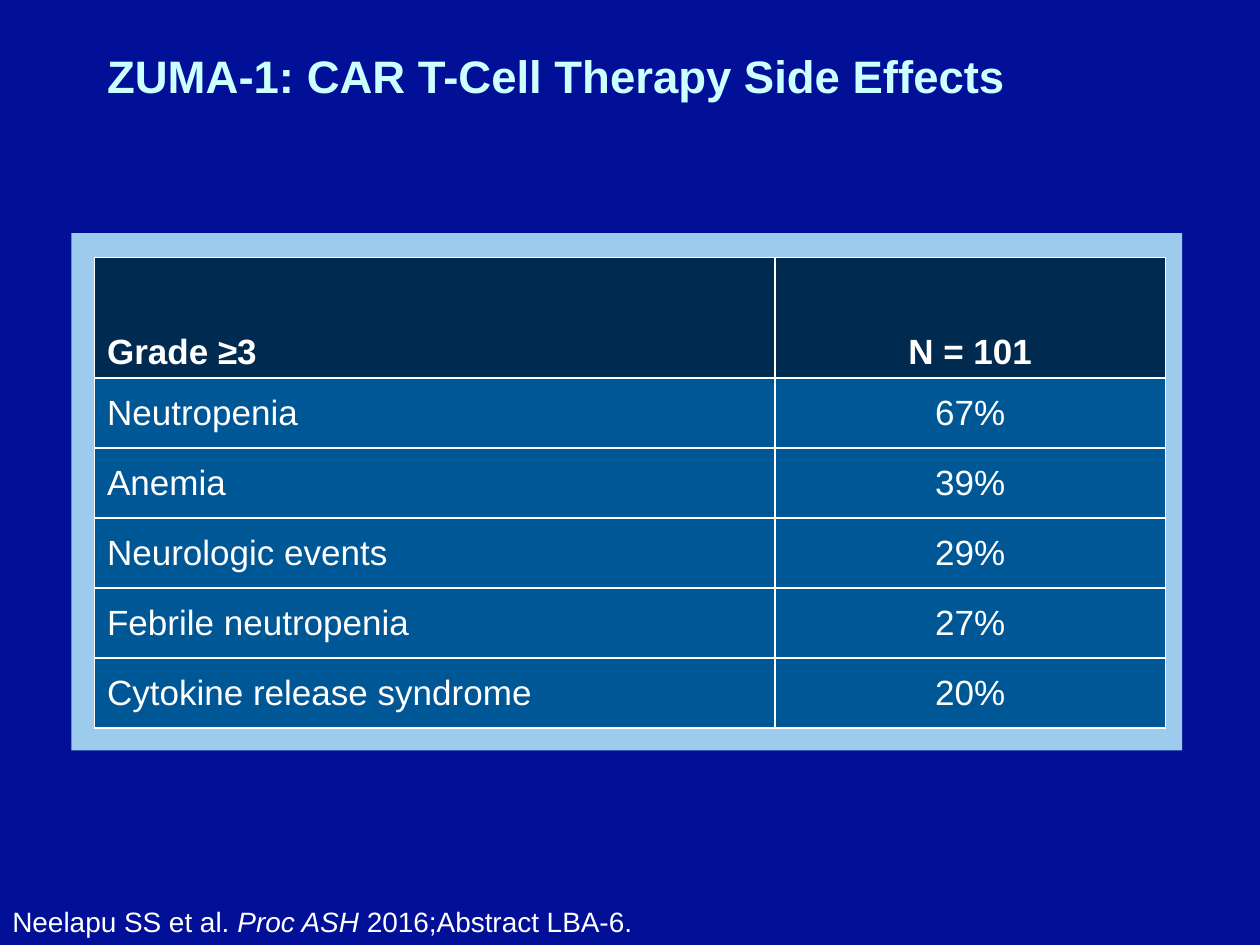
from dataclasses import dataclass

from lxml import etree
from pptx import Presentation
from pptx.dml.color import RGBColor
from pptx.enum import shapes, text
from pptx.oxml import ns
from pptx.util import Pt

COLORS = {
    "background": "011097",
    "title": "CCFFFF",
    "panel": "9CCBED",
    "header": "012A50",
    "body": "005796",
    "white": "FFFFFF",
}
LEFT, CENTER = text.PP_ALIGN.LEFT, text.PP_ALIGN.CENTER
MIDDLE, BOTTOM = text.MSO_ANCHOR.MIDDLE, text.MSO_ANCHOR.BOTTOM


@dataclass
class SideEffect:
    name: str
    rate: str


HEADER = SideEffect("Grade ≥3", "N = 101")
SIDE_EFFECTS = [
    SideEffect("Neutropenia", "67%"),
    SideEffect("Anemia", "39%"),
    SideEffect("Neurologic events", "29%"),
    SideEffect("Febrile neutropenia", "27%"),
    SideEffect("Cytokine release syndrome", "20%"),
]


def rgb(name: str) -> RGBColor:
    return RGBColor.from_string(COLORS[name])


def paint(fill, color: str) -> None:
    fill.solid()
    fill.fore_color.rgb = rgb(color)


def write(paragraph, content: str, *, size: float, color: str = "white",
          bold: bool = False, italic: bool = False, align=LEFT) -> None:
    """Add one formatted run to a paragraph."""
    paragraph.alignment = align
    run = paragraph.add_run()
    run.text = content
    font = run.font
    font.name, font.size = "Arial", Pt(size)
    font.bold, font.italic = bold, italic
    font.color.rgb = rgb(color)


def add_borders(cell, color: str, width: float) -> None:
    properties = cell._tc.get_or_add_tcPr()
    for side in ("a:lnL", "a:lnR", "a:lnT", "a:lnB"):
        line = etree.SubElement(properties, ns.qn(side), w=str(Pt(width)))
        fill = etree.SubElement(line, ns.qn("a:solidFill"))
        etree.SubElement(fill, ns.qn("a:srgbClr"), val=COLORS[color])


def fill_row(table, index: int, effect: SideEffect, *, height: float,
             color: str, bold: bool, anchor) -> None:
    table.rows[index].height = Pt(height)
    columns = ((effect.name, LEFT), (effect.rate, CENTER))
    for column, (content, align) in enumerate(columns):
        cell = table.cell(index, column)
        cell.vertical_anchor = anchor
        add_borders(cell, "white", 1)
        paint(cell.fill, color)
        write(cell.text_frame.paragraphs[0], content, size=20, bold=bold, align=align)


def main() -> None:
    deck = Presentation()
    deck.slide_width, deck.slide_height = Pt(720), Pt(540)
    slide = deck.slides.add_slide(deck.slide_layouts[5])
    paint(slide.background.fill, "background")

    # Title
    title = slide.shapes.title
    title.left, title.top, title.width, title.height = Pt(54), Pt(0), Pt(612), Pt(90)
    title.text_frame.vertical_anchor = MIDDLE
    heading = title.text_frame.paragraphs[0]
    heading.line_spacing = 0.9
    write(heading, "ZUMA-1: CAR T-Cell Therapy Side Effects",
          size=26, color="title", bold=True)

    # Panel behind the table
    panel = slide.shapes.add_shape(shapes.MSO_SHAPE.RECTANGLE,
                                   Pt(40.8), Pt(133.2), Pt(634.8), Pt(295.7))
    panel.shadow.inherit = False
    paint(panel.fill, "panel")
    panel.line.fill.background()

    # Side effects table
    header_height, row_height = 69, 40
    table = slide.shapes.add_table(
        len(SIDE_EFFECTS) + 1, 2, Pt(54), Pt(147), Pt(612),
        Pt(header_height + row_height * len(SIDE_EFFECTS))).table
    for column, width in zip(table.columns, (388.8, 223.2)):
        column.width = Pt(width)
    fill_row(table, 0, HEADER, height=header_height, color="header",
             bold=True, anchor=BOTTOM)
    for index, effect in enumerate(SIDE_EFFECTS, start=1):
        fill_row(table, index, effect, height=row_height, color="body",
                 bold=False, anchor=MIDDLE)

    # Citation
    citation = slide.shapes.add_textbox(Pt(0), Pt(513.3), Pt(704), Pt(26.7)).text_frame
    citation.word_wrap = True
    citation.auto_size = text.MSO_AUTO_SIZE.SHAPE_TO_FIT_TEXT
    source = citation.paragraphs[0]
    write(source, "Neelapu SS et al. ", size=16)
    write(source, "Proc ASH ", size=16, italic=True)
    write(source, "2016;Abstract LBA-6.", size=16)

    deck.save("out.pptx")


if __name__ == "__main__":
    main()
